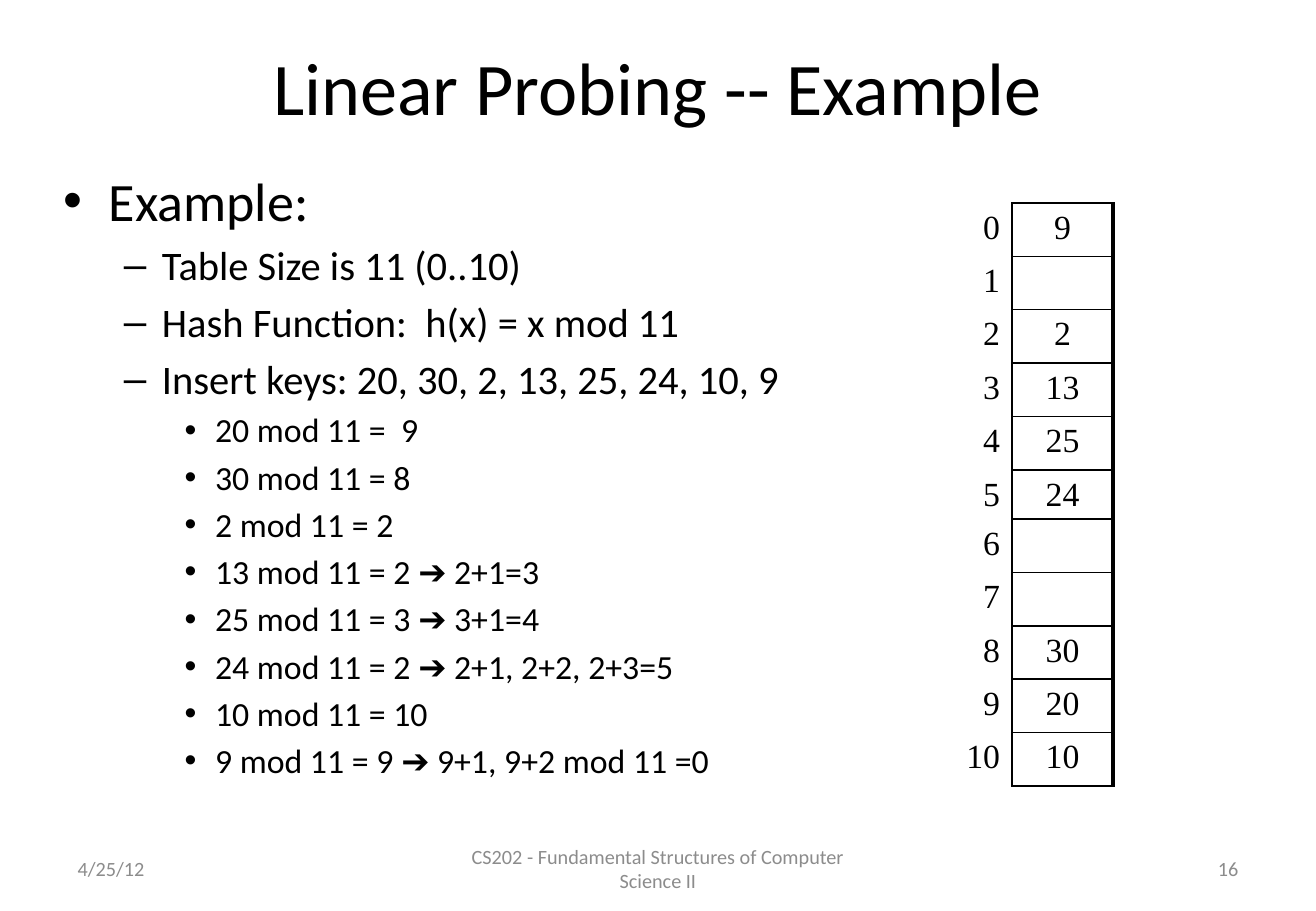
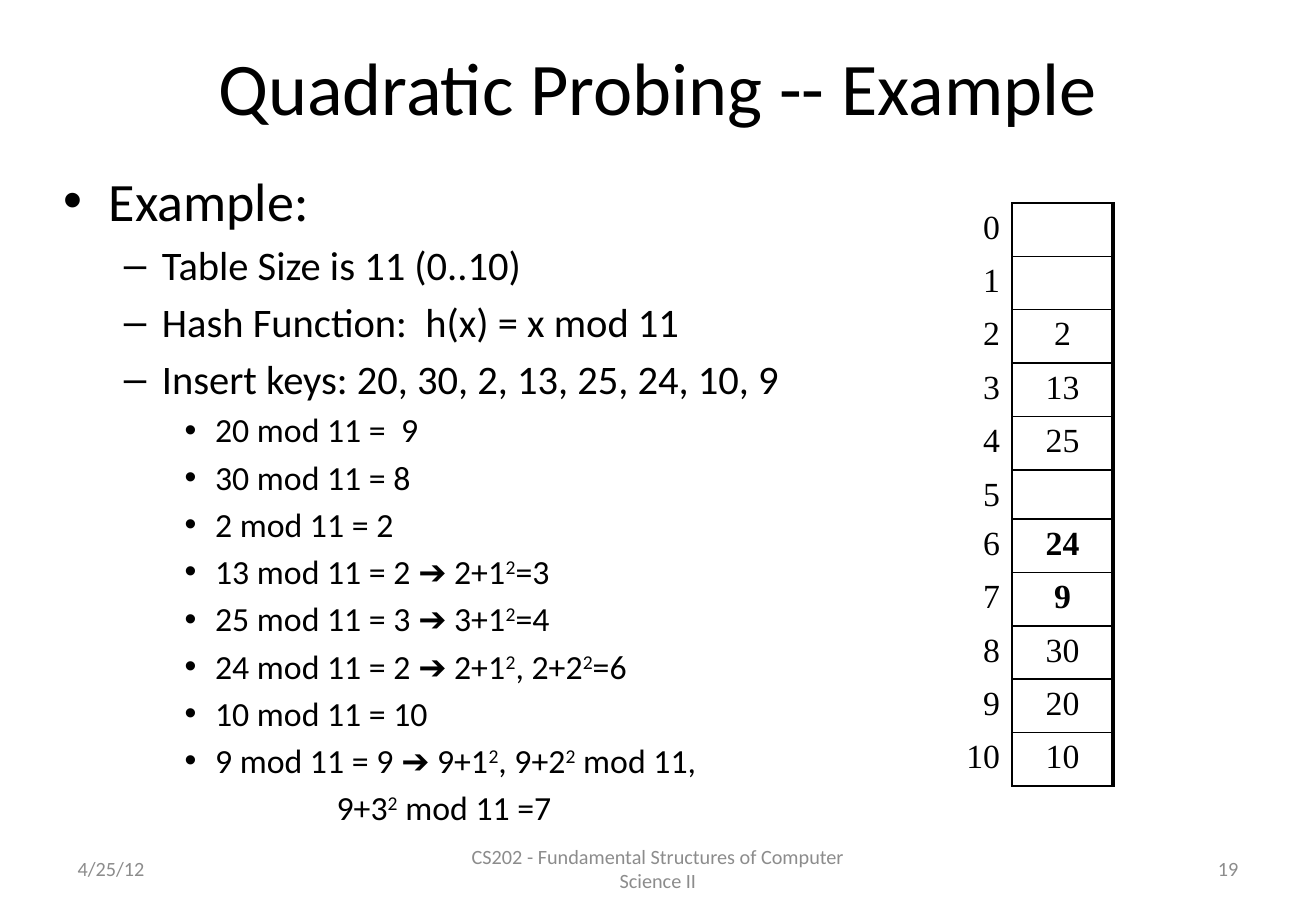
from lxml import etree
from pptx import Presentation
from pptx import util as u
from pptx.dml import color as dml
from pptx.enum import text as t
from pptx.oxml import ns

BLACK, GREY = "000000", "8C8C8C"
BODY_FONT, TABLE_FONT = "Calibri", "Times New Roman"
LEFT, CENTER, RIGHT = t.PP_ALIGN.LEFT, t.PP_ALIGN.CENTER, t.PP_ALIGN.RIGHT
NO_GRID_STYLE = "{2D5ABB26-0587-4C30-8999-92F81FD0307C}"
LEVEL_SIZES = (32, 24, 20)
COLUMN_WIDTHS = (0.58, 0.83)
ROW_HEIGHTS = [0.44] * 5 + [0.4] + [0.44] * 5

TITLE_BOX = (0.54, 0.25, 9.75, 0.92)
BODY_BOX = (0.42, 1.33, 6.75, 5.58)
FOOTER_BOX = (0.54, 6.95, 9.75, 0.4)
TABLE_BOX = (7.75, 1.67, 1.41, sum(ROW_HEIGHTS))

DATE = "4/25/12"
COURSE = "CS202 - Fundamental Structures of Computer Science II"

SHARED_LINES = [
    (0, "Example:"),
    (1, "Table Size is 11 (0..10)"),
    (1, "Hash Function:  h(x) = x mod 11"),
    (1, "Insert keys: 20, 30, 2, 13, 25, 24, 10, 9"),
    (2, "20 mod 11 =  9"),
    (2, "30 mod 11 = 8"),
    (2, "2 mod 11 = 2"),
]

EXAMPLES = [
    {
        "title": "Linear Probing -- Example",
        "probes": [
            "13 mod 11 = 2 ➔ 2+1=3",
            "25 mod 11 = 3 ➔ 3+1=4",
            "24 mod 11 = 2 ➔ 2+1, 2+2, 2+3=5",
            "10 mod 11 = 10",
            "9 mod 11 = 9 ➔ 9+1, 9+2 mod 11 =0",
        ],
        "continuation": None,
        "keys": {0: 9, 2: 2, 3: 13, 4: 25, 5: 24, 8: 30, 9: 20, 10: 10},
        "bold_slots": (),
        "number": "16",
    },
    {
        "title": "Quadratic Probing -- Example",
        "probes": [
            "13 mod 11 = 2 ➔ 2+1^2=3",
            "25 mod 11 = 3 ➔ 3+1^2=4",
            "24 mod 11 = 2 ➔ 2+1^2, 2+2^2=6",
            "10 mod 11 = 10",
            "9 mod 11 = 9 ➔ 9+1^2, 9+2^2 mod 11,",
        ],
        "continuation": "9+3^2 mod 11 =7",
        "keys": {2: 2, 3: 13, 4: 25, 6: 24, 7: 9, 8: 30, 9: 20, 10: 10},
        "bold_slots": (6, 7),
        "number": "19",
    },
]


def rgb(value):
    """Turn a hex string into a colour."""
    return dml.RGBColor.from_string(value)


def inches(box):
    """Turn a box of numbers into lengths."""
    return [u.Inches(value) for value in box]


def place(shape, box):
    """Move and size a shape to fill a box."""
    shape.left, shape.top, shape.width, shape.height = inches(box)


def write(paragraph, content, size=20, font=BODY_FONT, color=BLACK, bold=None, align=None):
    """Write formatted text, raising each character that follows a caret."""
    paragraph.alignment = align
    first, *powers = content.split("^")
    pieces = [(first, False)]
    for power in powers:
        pieces += [(power[:1], True), (power[1:], False)]
    for piece, raised in pieces:
        if piece:
            run = paragraph.add_run()
            run.text = piece
            run.font.size, run.font.name, run.font.bold = u.Pt(size), font, bold
            run.font.color.rgb = rgb(color)
            if raised:
                run._r.get_or_add_rPr().set("baseline", "30000")


def add_title(slide, box, title):
    """Fill the title placeholder."""
    shape = slide.shapes.title
    place(shape, box)
    shape.text_frame.vertical_anchor = t.MSO_ANCHOR.MIDDLE
    write(shape.text_frame.paragraphs[0], title, size=44, align=CENTER)


def add_body(slide, box, lines, continuation):
    """Fill the body placeholder with a list and an optional indented last line."""
    shape = slide.placeholders[1]
    place(shape, box)
    frame = shape.text_frame
    frame.auto_size = t.MSO_AUTO_SIZE.NONE
    for index, (level, content) in enumerate(lines):
        paragraph = frame.add_paragraph() if index else frame.paragraphs[0]
        paragraph.level = level
        write(paragraph, content, size=LEVEL_SIZES[level])
    if continuation:
        paragraph = frame.add_paragraph()
        paragraph.level = 2
        write(paragraph, continuation)
        properties = paragraph._p.get_or_add_pPr()
        properties.set("marL", str(u.Inches(2.25)))
        properties.set("indent", "0")
        etree.SubElement(properties, ns.qn("a:buNone"))


def add_footer(slide, box, number):
    """Place the date, course and slide number across a box."""
    left, top, width, height = box
    side, middle = 2.53, 3.43
    parts = [
        (left, side, DATE, LEFT),
        (left + (width - middle) / 2, middle, COURSE, CENTER),
        (left + width - side, side, number, RIGHT),
    ]
    for part_left, part_width, content, align in parts:
        shape = slide.shapes.add_textbox(*inches((part_left, top, part_width, height)))
        shape.text_frame.word_wrap = True
        shape.text_frame.vertical_anchor = t.MSO_ANCHOR.MIDDLE
        write(shape.text_frame.paragraphs[0], content, size=12, color=GREY, align=align)


def set_borders(cell, **widths):
    """Draw black cell borders; keys are the sides L, R, T, B in that order."""
    properties = cell._tc.get_or_add_tcPr()
    for index, (side, width) in enumerate(widths.items()):
        line = etree.Element(ns.qn(f"a:ln{side}"), w=str(u.Pt(width)))
        fill = etree.SubElement(line, ns.qn("a:solidFill"))
        etree.SubElement(fill, ns.qn("a:srgbClr"), val=BLACK)
        properties.insert(index, line)


def add_hash_table(slide, box, keys, bold_slots):
    """Draw the numbered slots of a hash table."""
    table = slide.shapes.add_table(len(ROW_HEIGHTS), len(COLUMN_WIDTHS), *inches(box)).table
    table.first_row = table.horz_banding = False
    table._tbl.tblPr.find(ns.qn("a:tableStyleId")).text = NO_GRID_STYLE
    for column, width in zip(table.columns, COLUMN_WIDTHS):
        column.width = u.Inches(width)
    for slot, height in enumerate(ROW_HEIGHTS):
        table.rows[slot].height = u.Inches(height)
        label, value = table.cell(slot, 0), table.cell(slot, 1)
        for cell in (label, value):
            cell.fill.background()
            cell.margin_top, cell.margin_bottom = u.Inches(0.05), u.Inches(0.02)
        set_borders(label, R=1)
        set_borders(value, L=1, R=2.25, T=1, B=1)
        write(label.text_frame.paragraphs[0], str(slot), font=TABLE_FONT, align=RIGHT)
        write(value.text_frame.paragraphs[0], str(keys.get(slot, "")), font=TABLE_FONT,
              bold=slot in bold_slots, align=CENTER)


def add_example_slide(presentation, example):
    """Build one probing example slide."""
    slide = presentation.slides.add_slide(presentation.slide_layouts[1])
    lines = SHARED_LINES + [(2, probe) for probe in example["probes"]]
    add_title(slide, TITLE_BOX, example["title"])
    add_body(slide, BODY_BOX, lines, example["continuation"])
    add_footer(slide, FOOTER_BOX, example["number"])
    add_hash_table(slide, TABLE_BOX, example["keys"], example["bold_slots"])


def main():
    """Build and save the presentation."""
    presentation = Presentation()
    presentation.slide_width, presentation.slide_height = inches((10.83, 7.5))
    for example in EXAMPLES:
        add_example_slide(presentation, example)
    presentation.save("out.pptx")


if __name__ == "__main__":
    main()
